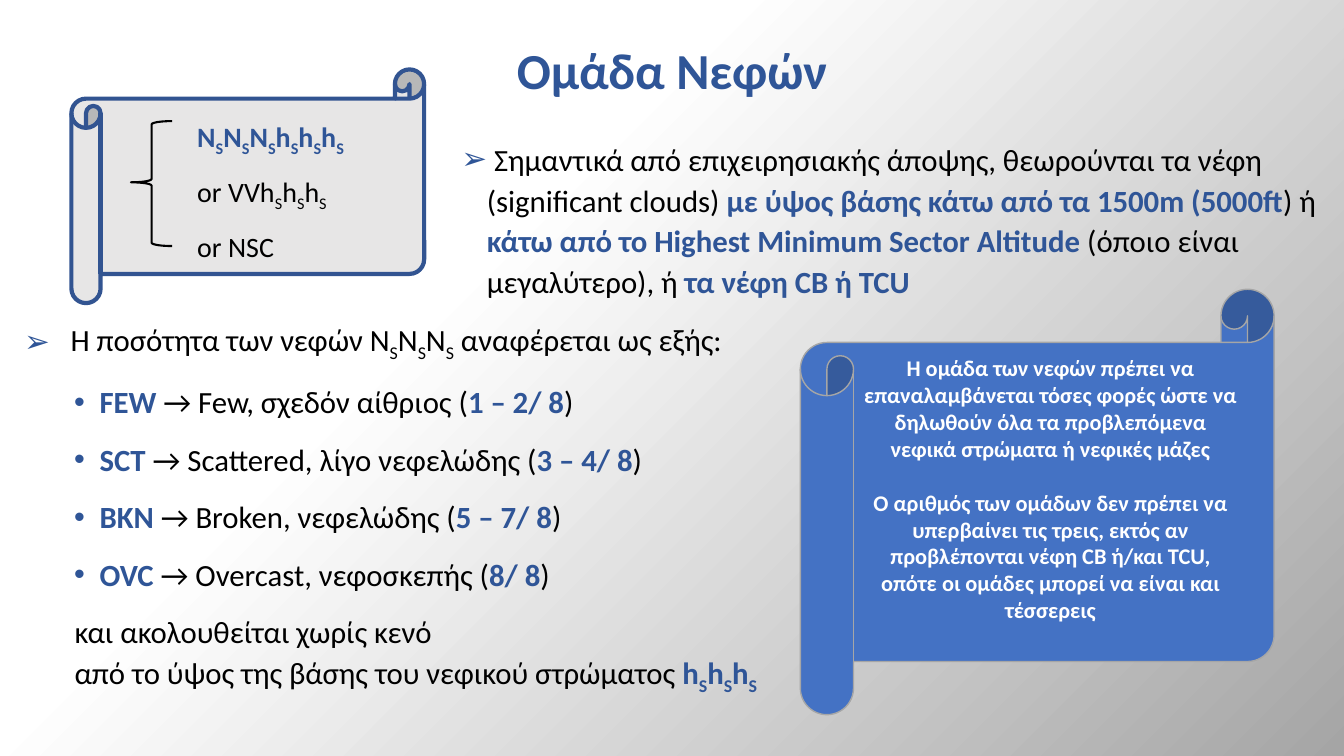
from pptx import Presentation, oxml, util as u
from pptx.dml.color import RGBColor
from pptx.enum import shapes, text
from pptx.oxml.ns import nsdecls, qn
from lxml import etree

Cm, Pt = u.Cm, u.Pt
FONT = "Calibri"
COLORS = {
    "accent": "2F5597", "ink": "000000", "white": "FFFFFF", "grey": "A5A5A5",
    "paper": "E7E6E6", "paper_edge": "325491", "blue": "4472C4", "blue_edge": "A6A6A6",
}


def rgb(name):
    return RGBColor.from_string(COLORS[name])


def add_run(p, words, size, color, bold, sub=False):
    r = p.add_run()
    r.text = words
    r.font.name, r.font.size, r.font.bold = FONT, Pt(size), bold
    r.font.color.rgb = rgb(color)
    if sub:
        r.font._element.set("baseline", "-25000")


def add_runs(p, marked, size):
    """Write marked text: *bold accent*, _ before one subscript letter, newline for a line break."""
    for i, part in enumerate(marked.split("*")):
        style = (size, "accent", True) if i % 2 else (size, "ink", False)
        for j, line in enumerate(part.split("\n")):
            if j:
                p.add_line_break()
            head, *tails = line.split("_")
            if head:
                add_run(p, head, *style)
            for tail in tails:
                add_run(p, tail[0], *style, sub=True)
                if tail[1:]:
                    add_run(p, tail[1:], *style)


def set_indent(p, left, hanging=0, bullet=None):
    pPr = p._p.get_or_add_pPr()
    pPr.set("marL", str(Cm(left)))
    pPr.set("indent", str(-Cm(hanging)))
    if bullet:
        color = etree.SubElement(pPr, qn("a:buClr"))
        etree.SubElement(color, qn("a:srgbClr")).set("val", COLORS["accent"])
        etree.SubElement(pPr, qn("a:buFont")).set("typeface", "Arial")
        etree.SubElement(pPr, qn("a:buChar")).set("char", bullet)


def add_text(parent, box, paragraphs, size, line_spacing=None):
    """Add a text box; each paragraph is (marked text, indent arguments)."""
    tf = parent.add_textbox(*map(Cm, box)).text_frame
    tf.word_wrap = True
    for i, (marked, indent) in enumerate(paragraphs):
        p = tf.paragraphs[0] if i == 0 else tf.add_paragraph()
        p.space_before = p.space_after = Pt(6)
        if line_spacing:
            p.line_spacing = line_spacing
        set_indent(p, *indent)
        add_runs(p, marked, size)


def add_scroll(s, box, fill, edge, width):
    sp = s.shapes.add_shape(shapes.MSO_SHAPE.HORIZONTAL_SCROLL, *map(Cm, box))
    sp.shadow.inherit = False
    sp.fill.solid()
    sp.fill.fore_color.rgb = rgb(fill)
    sp.line.color.rgb = rgb(edge)
    sp.line.width = Pt(width)
    return sp


def paint_background(s):
    stops = "".join(
        f'<a:gs pos="{pos}"><a:srgbClr val="{COLORS[name]}"/></a:gs>'
        for pos, name in ((0, "white"), (35000, "white"), (100000, "grey")))
    s._element.cSld.insert(0, oxml.parse_xml(
        f'<p:bg {nsdecls("p", "a")}><p:bgPr><a:gradFill rotWithShape="1"><a:gsLst>{stops}</a:gsLst>'
        '<a:path path="circle"><a:fillToRect r="100000" b="100000"/></a:path>'
        '<a:tileRect l="-100000" t="-100000"/></a:gradFill><a:effectLst/></p:bgPr></p:bg>'))


def add_title(s, box, words):
    title = s.shapes.title
    title.left, title.top, title.width, title.height = map(Cm, box)
    tf = title.text_frame
    tf.vertical_anchor = text.MSO_ANCHOR.MIDDLE
    p = tf.paragraphs[0]
    p.alignment = text.PP_ALIGN.CENTER
    p.line_spacing = 0.9
    add_run(p, words, 36, "accent", True)


def add_code_forms(s, box):
    """Pale scroll with a brace over the three ways to code the cloud group."""
    x, y, _, _ = box
    add_scroll(s, box, "paper", "paper_edge", 3)
    group = s.shapes.add_group_shape().shapes
    brace = group.add_shape(shapes.MSO_SHAPE.RIGHT_BRACE,
                            Cm(x + 1.5), Cm(y + 1.3), Cm(1.04), Cm(3.15))
    brace.rotation = 180
    brace.adjustments[0], brace.adjustments[1] = 0.08, 0.51
    brace.shadow.inherit = False
    brace.fill.background()
    brace.line.color.rgb = rgb("ink")
    brace.line.width = Pt(1.5)
    forms = ("*N_SN_SN_Sh_Sh_Sh_S*", "or VVh_Sh_Sh_S", "or NSC")
    add_text(group, (x + 2.92, y + 1.14, 4.7, 3.68), [(form, (0,)) for form in forms], 20)


def add_significance(s, box):
    marked = (" Σημαντικά από επιχειρησιακής άποψης, θεωρούνται τα νέφη (significant clouds) "
              "*με ύψος βάσης κάτω από τα 1500m (5000ft*) ή "
              "*κάτω από το Highest Minimum Sector Altitude *"
              "(όποιο είναι μεγαλύτερο), ή *τα νέφη CΒ ή TCU*")
    add_text(s.shapes, box, [(marked, (0.64, 0.64, "➢"))], 22, 1.1)


def add_amounts(s, box):
    amounts = (("FEW", "Few, σχεδόν αίθριος", "1 – 2/ 8"),
               ("SCT", "Scattered, λίγο νεφελώδης", "3 – 4/ 8"),
               ("ΒΚΝ", "Broken, νεφελώδης", "5 – 7/ 8"),
               ("OVC", "Overcast, νεφοσκεπής", "8/ 8"))
    paragraphs = [("Η ποσότητα των νεφών N_SN_SN_S αναφέρεται ως εξής:", (1.17, 1.17, "➢"))]
    paragraphs += [(f"*{code} *→ {meaning} (*{eighths}*)", (1.9, 0.64, "•"))
                   for code, meaning, eighths in amounts]
    paragraphs.append(("και ακολουθείται χωρίς κενό\n"
                       "από το ύψος της βάσης του νεφικού στρώματος *h_Sh_Sh_S*", (1.27,)))
    add_text(s.shapes, box, paragraphs, 22, 1.1)


def add_repeat_rule(s, box):
    tf = add_scroll(s, box, "blue", "blue_edge", 1).text_frame
    tf.word_wrap = True
    tf.vertical_anchor = text.MSO_ANCHOR.MIDDLE
    tf.margin_bottom = Cm(0.8)
    rules = ("Η ομάδα των νεφών πρέπει να επαναλαμβάνεται τόσες φορές ώστε να "
             "δηλωθούν όλα τα προβλεπόμενα νεφικά στρώματα ή νεφικές μάζες",
             "Ο αριθμός των ομάδων δεν πρέπει να υπερβαίνει τις τρεις, εκτός αν "
             "προβλέπονται νέφη CΒ ή/και TCU, οπότε οι ομάδες μπορεί να είναι και τέσσερεις")
    for i, rule in enumerate(rules):
        p = tf.add_paragraph() if i else tf.paragraphs[0]
        p.alignment = text.PP_ALIGN.CENTER
        p.space_before = Pt(19.5 * i)
        add_run(p, rule, 16, "white", True)


def main():
    prs = Presentation()
    prs.slide_width, prs.slide_height = Cm(33.87), Cm(19.05)
    s = prs.slides.add_slide(prs.slide_layouts[5])
    paint_background(s)
    add_title(s, (0, 0, 33.87, 3.68), "Ομάδα Νεφών")
    add_code_forms(s, (1.8, 1.75, 8.89, 5.89))
    add_significance(s, (11.38, 3.33, 22.12, 4.32))
    add_amounts(s, (0.36, 7.85, 32.61, 4.32))
    add_repeat_rule(s, (20.17, 7.29, 11.94, 10.72))
    prs.save("out.pptx")


if __name__ == "__main__":
    main()
